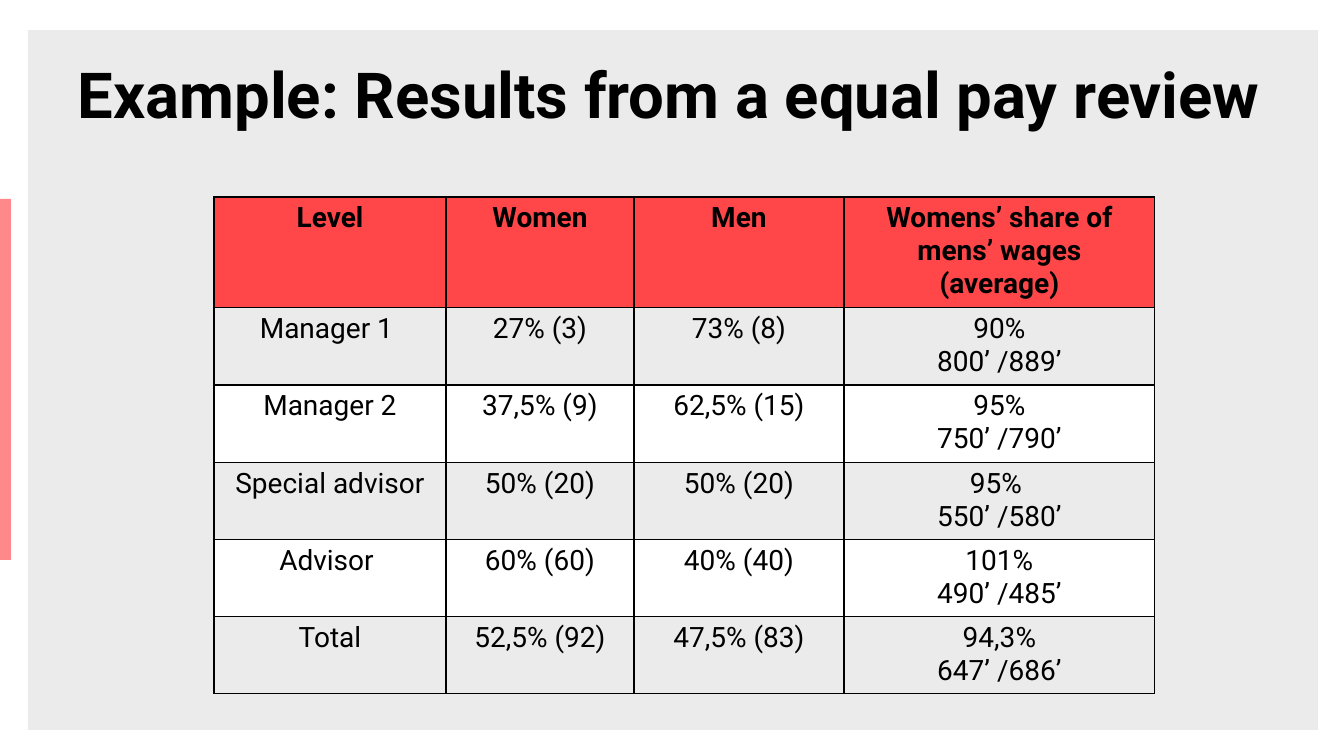
"""Build a slide with a table of results from an equal pay review."""
import pptx
import pptx.dml.color
import pptx.enum.shapes
import pptx.enum.text
import pptx.oxml
import pptx.oxml.ns
import pptx.util

PX = 914400 / 100.8
FONT = "Roboto"
COLORS = {
    "panel": "EBEBEB",
    "accent": "FF888A",
    "header": "FF474A",
    "white": "FFFFFF",
    "black": "000000",
}


def px(count):
    return pptx.util.Emu(round(count * PX))


def style(para, size, bold):
    para.font.name = FONT
    para.font.size = pptx.util.Pt(size)
    para.font.bold = bold
    para.font.color.rgb = pptx.dml.color.RGBColor.from_string(COLORS["black"])


deck = pptx.Presentation()
deck.slide_width = px(1344)
deck.slide_height = px(756)
slide = deck.slides.add_slide(deck.slide_layouts[6])

for name, left, top, width, height in [
    ("panel", 28, 30, 1290, 700),
    ("accent", 0, 199, 11, 361),
]:
    rect = slide.shapes.add_shape(
        pptx.enum.shapes.MSO_SHAPE.RECTANGLE, px(left), px(top), px(width), px(height)
    )
    rect.shadow.inherit = False
    rect.fill.solid()
    rect.fill.fore_color.rgb = pptx.dml.color.RGBColor.from_string(COLORS[name])
    rect.line.fill.background()

title = slide.shapes.add_textbox(px(68), px(30), px(1210), px(126)).text_frame
title.word_wrap = True
title.vertical_anchor = pptx.enum.text.MSO_ANCHOR.MIDDLE
title.text = "Example: Results from a equal pay review"
style(title.paragraphs[0], 45.3, True)

rows = [
    ["Level", "Women", "Men", "Womens’ share of mens’ wages (average)"],
    ["Manager 1 ", "27% (3)", "73% (8)", "90%\n800’ /889’"],
    ["Manager 2", "37,5% (9)", "62,5% (15)", "95%\n750’ /790’"],
    ["Special advisor", "50% (20)", "50% (20)", "95% \n550’ /580’"],
    ["Advisor ", "60% (60)", "40% (40)", "101%\n490’ /485’"],
    ["Total", "52,5% (92)", "47,5% (83)", "94,3%\n647’ /686’"],
]
widths = [232, 188, 210, 311]
heights = [109] + [76] * 5
table = slide.shapes.add_table(
    len(rows), len(widths), px(214), px(197), px(sum(widths)), px(sum(heights))
).table
for column, width in zip(table.columns, widths):
    column.width = px(width)

for index, texts in enumerate(rows):
    table.rows[index].height = px(heights[index])
    head = index == 0
    fill = "header" if head else "panel" if index % 2 else "white"
    for place, text in enumerate(texts):
        cell = table.cell(index, place)
        cell.margin_left = cell.margin_right = px(14)
        cell.margin_top = cell.margin_bottom = px(5)
        cell.text = text
        for para in cell.text_frame.paragraphs:
            para.alignment = pptx.enum.text.PP_ALIGN.CENTER
            style(para, 20, head)
        props = cell._tc.get_or_add_tcPr()
        for side in "LRTB":
            props.append(pptx.oxml.parse_xml(
                f'<a:ln{side} {pptx.oxml.ns.nsdecls("a")} w="12700"><a:solidFill>'
                f'<a:srgbClr val="{COLORS["black"]}"/></a:solidFill></a:ln{side}>'
            ))
        cell.fill.solid()
        cell.fill.fore_color.rgb = pptx.dml.color.RGBColor.from_string(COLORS[fill])

deck.save("out.pptx")
